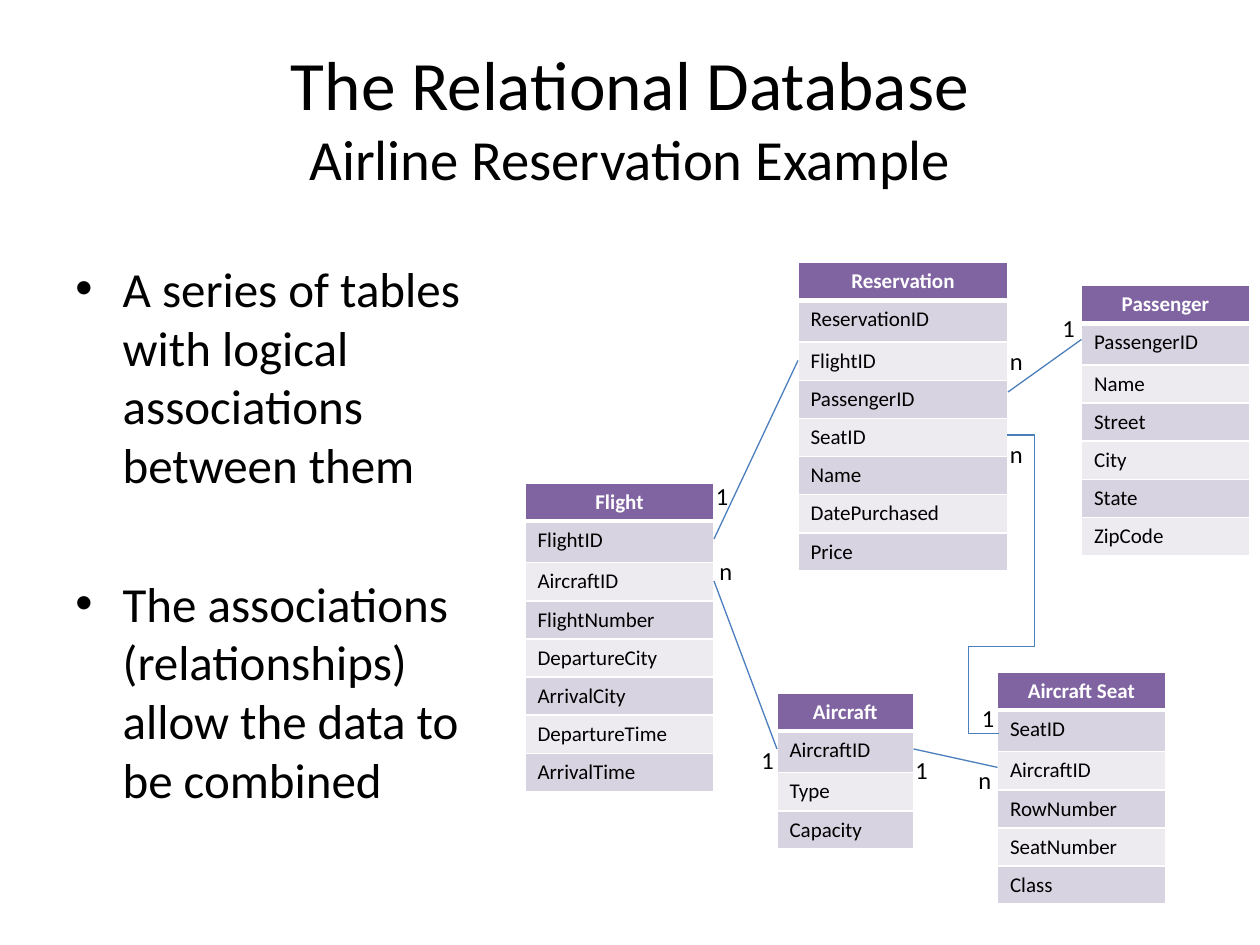
from pptx import Presentation
from pptx.dml.color import RGBColor
from pptx.enum import shapes, text
from pptx.oxml import ns, xmlchemy
from pptx.util import Pt
from lxml import etree

BLACK = RGBColor(0, 0, 0)
WHITE = RGBColor(0xFF, 0xFF, 0xFF)
PURPLE = RGBColor(0x80, 0x64, 0xA2)
BANDS = (RGBColor(0xD8, 0xD3, 0xE0), RGBColor(0xED, 0xEA, 0xF0))
BLUE = RGBColor(0x4B, 0x7E, 0xBC)
FONT = "Calibri"
ROW_H, KEY_H = 21.8, 23.7

ENTITIES = [
    ((300, 276, 108), "Flight", ["FlightID", "AircraftID", "FlightNumber", "DepartureCity",
                                 "ArrivalCity", "DepartureTime", "ArrivalTime"]),
    ((456, 150, 120), "Reservation", ["ReservationID", "FlightID", "PassengerID", "SeatID",
                                      "Name", "DatePurchased", "Price"]),
    ((618, 163, 96), "Passenger", ["PassengerID", "Name", "Street", "City", "State", "ZipCode"]),
    ((444, 396, 78), "Aircraft", ["AircraftID", "Type", "Capacity"]),
    ((570, 384, 96), "Aircraft Seat", ["SeatID", "AircraftID", "RowNumber", "SeatNumber", "Class"]),
]
LINKS = [
    (408, 308, 456, 206),
    (408, 332, 444, 428),
    (522, 428, 570, 438.5),
    (576, 224, 618, 194),
]
SEAT_ROUTE = [(575.5, 248.5), (591, 248.5), (591, 369.5), (553.5, 369.5), (553.5, 419), (571, 419)]
CARDINALITIES = {
    "1": [(402, 271.5), (428, 422), (516, 428), (554, 398), (600, 175.5)],
    "n": [(570, 194), (570, 247.5), (404, 314), (552, 433.5)],
}


def add_run(p, words, size, color=BLACK, bold=False):
    r = p.add_run()
    r.text = words
    r.font.name, r.font.size, r.font.bold = FONT, Pt(size), bold
    r.font.color.rgb = color


def add_box(slide, box, wrap=True):
    tf = slide.shapes.add_textbox(*(Pt(v) for v in box)).text_frame
    tf.word_wrap = wrap
    return tf


def add_title(slide, box):
    tf = add_box(slide, box)
    tf.vertical_anchor = text.MSO_ANCHOR.MIDDLE
    p = tf.paragraphs[0]
    p.alignment = text.PP_ALIGN.CENTER
    add_run(p, "The Relational Database", 39.6)
    p.add_line_break()
    add_run(p, "Airline Reservation Example", 32.4)


def add_bullets(slide, box):
    tf = add_box(slide, box)
    points = [("A series of tables with logical associations between them", 5.6),
              ("The associations (relationships) allow the data to be combined", 45.4)]
    for i, (words, gap) in enumerate(points):
        p = tf.add_paragraph() if i else tf.paragraphs[0]
        p.space_before = Pt(gap)
        pPr = p._p.get_or_add_pPr()
        pPr.set("marL", str(Pt(27)))
        pPr.set("indent", str(Pt(-27)))
        etree.SubElement(pPr, ns.qn("a:buFont")).set("typeface", "Arial")
        etree.SubElement(pPr, ns.qn("a:buChar")).set("char", "•")
        add_run(p, words, 28)


def set_borders(cell, bottom):
    tcPr = cell._tc.get_or_add_tcPr()
    for i, (side, width) in enumerate((("L", 1), ("R", 1), ("T", 1), ("B", bottom))):
        ln = etree.Element(ns.qn(f"a:ln{side}"), w=str(Pt(width)))
        fill = etree.SubElement(ln, ns.qn("a:solidFill"))
        etree.SubElement(fill, ns.qn("a:srgbClr")).set("val", str(WHITE))
        tcPr.insert(i, ln)


def add_entity(slide, box, name, fields):
    x, y, w = box
    height = ROW_H * len(fields) + KEY_H
    table = slide.shapes.add_table(len(fields) + 1, 1, Pt(x), Pt(y), Pt(w), Pt(height)).table
    for i, words in enumerate([name] + fields):
        header = i == 0
        table.rows[i].height = Pt(KEY_H if i == 1 else ROW_H)
        cell = table.cell(i, 0)
        cell.fill.solid()
        cell.fill.fore_color.rgb = PURPLE if header else BANDS[(i - 1) % 2]
        set_borders(cell, 3 if header else 1)
        p = cell.text_frame.paragraphs[0]
        p.alignment = text.PP_ALIGN.CENTER if header else text.PP_ALIGN.LEFT
        add_run(p, words, 12, WHITE if header else BLACK, header)


def style_line(line):
    line.color.rgb = BLUE
    line.width = Pt(0.75)


def add_links(slide):
    for ends in LINKS:
        s = slide.shapes.add_connector(shapes.MSO_CONNECTOR.STRAIGHT, *(Pt(v) for v in ends))
        style_line(s.line)
        etree.SubElement(s._element.spPr, ns.qn("a:effectLst"))
    start, *rest = [(Pt(x), Pt(y)) for x, y in SEAT_ROUTE]
    builder = slide.shapes.build_freeform(*start)
    builder.add_line_segments(rest, close=False)
    route = builder.convert_to_shape()
    route.fill.background()
    route.shadow.inherit = False
    style_line(route.line)


def add_cardinalities(slide):
    for words, spots in CARDINALITIES.items():
        for x, y in spots:
            tf = add_box(slide, (x, y, 22, 24.5), wrap=False)
            add_run(tf.paragraphs[0], words, 14)


def main():
    prs = Presentation()
    prs.slide_width, prs.slide_height = Pt(720), Pt(540)
    slide = prs.slides.add_slide(prs.slide_layouts[6])
    add_title(slide, (36, 21.6, 648, 90))
    add_bullets(slide, (36, 144, 264, 384))
    for box, name, fields in ENTITIES:
        add_entity(slide, box, name, fields)
    add_links(slide)
    add_cardinalities(slide)
    prs.save("out.pptx")


if __name__ == "__main__":
    main()
